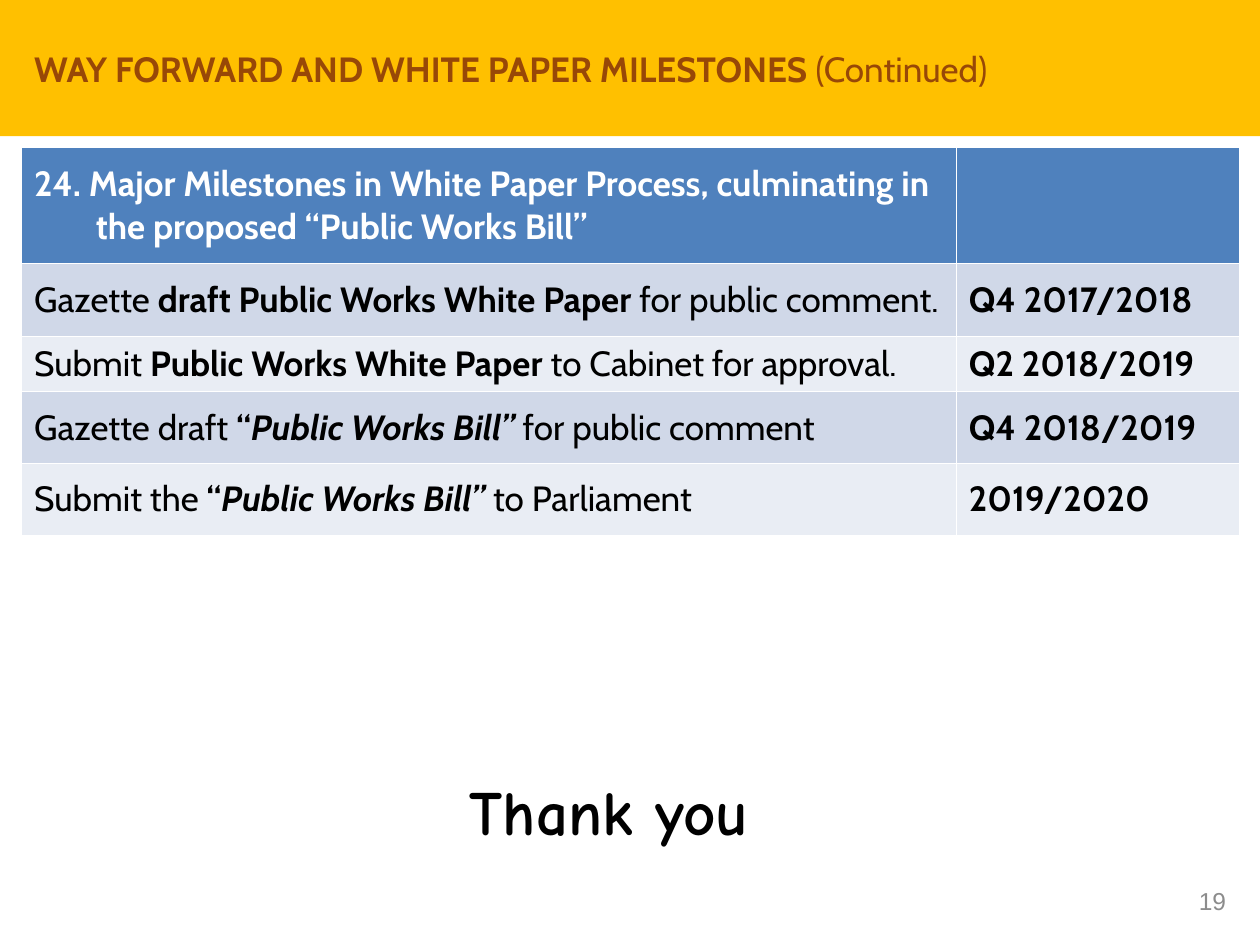
from pptx import Presentation
from pptx.dml.color import RGBColor
from pptx.enum.shapes import MSO_SHAPE
from pptx.enum.text import MSO_ANCHOR, MSO_AUTO_SIZE, PP_ALIGN
from pptx.util import Emu, Inches, Pt

RECTANGLE = MSO_SHAPE.RECTANGLE
MIDDLE, TOP = MSO_ANCHOR.MIDDLE, MSO_ANCHOR.TOP
NO_AUTOFIT = MSO_AUTO_SIZE.NONE
LEFT, CENTER, RIGHT = PP_ALIGN.LEFT, PP_ALIGN.CENTER, PP_ALIGN.RIGHT

TITLE = [("WAY FORWARD AND WHITE PAPER MILESTONES ", "b"), ("(Continued)", "")]
HEADER = [("24. Major Milestones in White Paper Process, culminating in "
           "the proposed “Public Works Bill”", "b")]
MILESTONES = [
    ([("Gazette ", ""), ("draft Public Works White Paper ", "b"),
      ("for public comment.", "")], "Q4 2017/2018"),
    ([("Submit ", ""), ("Public Works White Paper ", "b"),
      ("to Cabinet for approval.", "")], "Q2 2018/2019"),
    ([("Gazette draft ", ""), ("“", "b"), ("Public Works Bill” ", "bi"),
      ("for public comment", "")], "Q4 2018/2019"),
    ([("Submit the ", ""), ("“", "b"), ("Public Works Bill” ", "bi"),
      ("to Parliament", "")], "2019/2020"),
]
CLOSING = [("Thank you", "b")]
SLIDE_NUMBER = [("19", "")]

SLIDE_WIDTH, SLIDE_HEIGHT = 10, 7.5
MARGIN = 0.17
BAND_HEIGHT = 1.08
TABLE_TOP = 1.17
COLUMN_WIDTHS = [7.42, 2.25]
ROW_HEIGHTS = [0.92, 0.58, 0.41, 0.57, 0.57]
HANGING_INDENT = 0.49
HEADER_FILL = "4F81BD"
BAND_FILLS = ["D0D8E8", "E9EDF4"]


def color(hex_string):
    return RGBColor.from_string(hex_string)


def fill_solid(target, hex_string):
    target.fill.solid()
    target.fill.fore_color.rgb = color(hex_string)


def write_runs(paragraph, runs, size, font_name, hex_string, alignment=LEFT):
    paragraph.alignment = alignment
    for text, style in runs:
        run = paragraph.add_run()
        run.text = text
        font = run.font
        font.name, font.size = font_name, Pt(size)
        font.bold, font.italic = "b" in style, "i" in style
        font.color.rgb = color(hex_string)


def place(shape, left, top, width, height):
    shape.left, shape.top = Inches(left), Inches(top)
    shape.width, shape.height = Inches(width), Inches(height)


def add_title(slide):
    title = slide.shapes.title
    place(title, MARGIN, 0, 9.33, BAND_HEIGHT)
    frame = title.text_frame
    frame.word_wrap, frame.auto_size = True, NO_AUTOFIT
    frame.vertical_anchor = MIDDLE
    write_runs(frame.paragraphs[0], TITLE, 20, "Cabin", "984807")
    band = slide.shapes.add_shape(RECTANGLE, 0, 0, Inches(SLIDE_WIDTH), Inches(BAND_HEIGHT))
    band.shadow.inherit = False
    fill_solid(band, "FFC000")
    band.line.fill.background()
    title._element.addprevious(band._element)


def add_milestone_table(slide):
    table = slide.shapes.add_table(
        len(ROW_HEIGHTS), len(COLUMN_WIDTHS), Inches(MARGIN), Inches(TABLE_TOP),
        Inches(sum(COLUMN_WIDTHS)), Inches(sum(ROW_HEIGHTS))).table
    for column, width in zip(table.columns, COLUMN_WIDTHS):
        column.width = Inches(width)
    for row, height in zip(table.rows, ROW_HEIGHTS):
        row.height = Inches(height)

    rows = [(HEADER, [])] + [(task, [(date, "b")]) for task, date in MILESTONES]
    for row_index, cells in enumerate(rows):
        is_header = row_index == 0
        fill = HEADER_FILL if is_header else BAND_FILLS[(row_index - 1) % 2]
        text_color = "FFFFFF" if is_header else "000000"
        for column_index, runs in enumerate(cells):
            cell = table.cell(row_index, column_index)
            fill_solid(cell, fill)
            cell.vertical_anchor = MIDDLE
            write_runs(cell.text_frame.paragraphs[0], runs, 20, "Cabin", text_color)

    properties = table.cell(0, 0).text_frame.paragraphs[0]._p.get_or_add_pPr()
    indent = Emu(Inches(HANGING_INDENT))
    properties.set("marL", str(indent))
    properties.set("indent", str(-indent))


def add_text(slide, box, runs, size, font_name, hex_string, alignment, anchor):
    frame = slide.shapes.add_textbox(*map(Inches, box)).text_frame
    frame.word_wrap = True
    frame.vertical_anchor = anchor
    write_runs(frame.paragraphs[0], runs, size, font_name, hex_string, alignment)


def main():
    presentation = Presentation()
    presentation.slide_width = Inches(SLIDE_WIDTH)
    presentation.slide_height = Inches(SLIDE_HEIGHT)
    slide = presentation.slides.add_slide(presentation.slide_layouts[5])
    add_title(slide)
    add_milestone_table(slide)
    add_text(slide, (9.33, 6.95, 0.5, 0.4), SLIDE_NUMBER, 14, "Arial", "8C8C8C", RIGHT, MIDDLE)
    add_text(slide, (3, 6.08, 3.67, 0.71), CLOSING, 36, "Comic Neue", "000000", CENTER, TOP)
    presentation.save("out.pptx")


if __name__ == "__main__":
    main()
